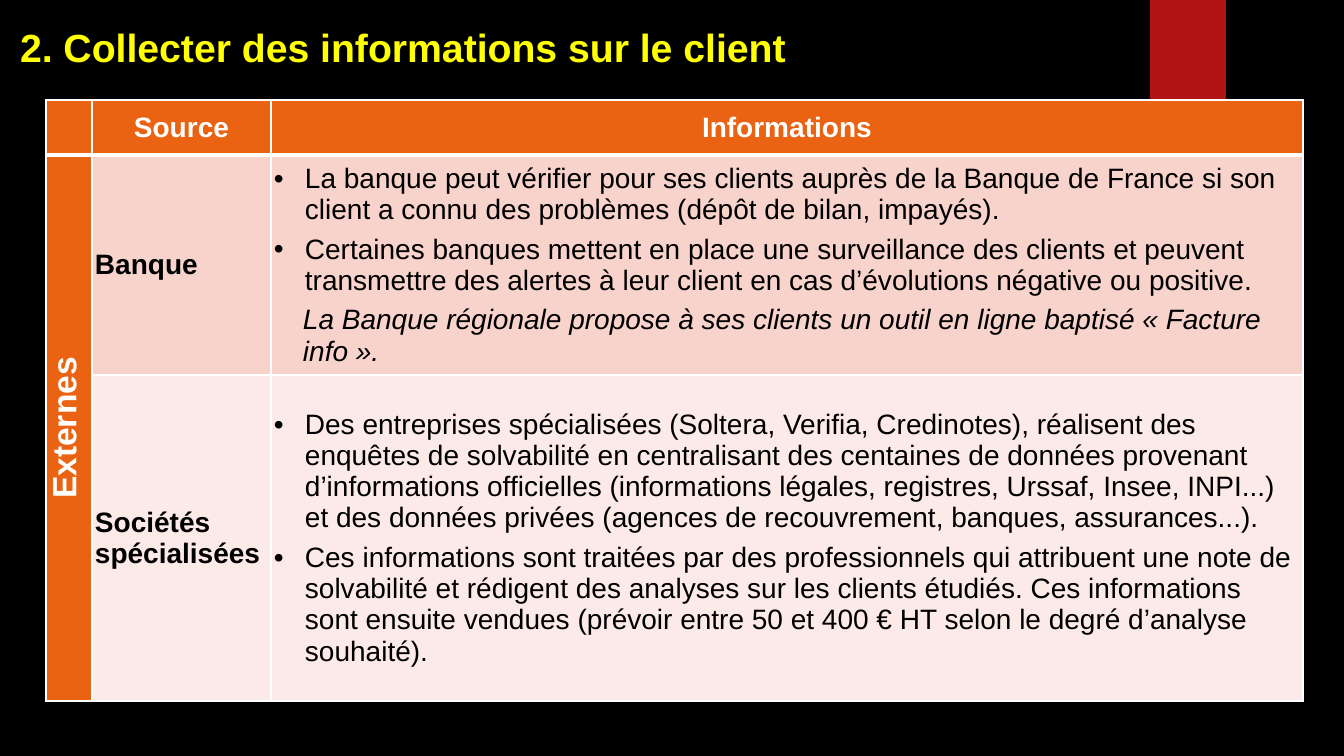
"""Build the slide on collecting information about a client."""
from lxml import etree
from pptx import Presentation
from pptx.dml.color import RGBColor
from pptx.enum.shapes import MSO_SHAPE
from pptx.enum.text import MSO_ANCHOR, MSO_AUTO_SIZE, PP_ALIGN
from pptx.oxml.ns import qn
from pptx.util import Pt

PX = 914400 / 100.8
RECT = MSO_SHAPE.RECTANGLE
TOP, MIDDLE = MSO_ANCHOR.TOP, MSO_ANCHOR.MIDDLE
LEFT, CENTER = PP_ALIGN.LEFT, PP_ALIGN.CENTER
NO_FIT = MSO_AUTO_SIZE.NONE
BLACK = RGBColor(0x00, 0x00, 0x00)
WHITE = RGBColor(0xFF, 0xFF, 0xFF)
YELLOW = RGBColor(0xFF, 0xFF, 0x00)
RED = RGBColor(0xB0, 0x15, 0x13)
ORANGE = RGBColor(0xEA, 0x63, 0x12)
PINK = RGBColor(0xF7, 0xD3, 0xCC)
PALE = RGBColor(0xFB, 0xEA, 0xE7)


def px(n):
    return round(n * PX)


def add_run(p, text, size, color, bold=False, italic=False):
    r = p.add_run()
    r.text = text
    r.font.name = "Arial"
    r.font.size = Pt(size)
    r.font.bold = bold
    r.font.italic = italic
    r.font.color.rgb = color


prs = Presentation()
prs.slide_width, prs.slide_height = px(1344), px(756)
s = prs.slides.add_slide(prs.slide_layouts[5])
s.background.fill.solid()
s.background.fill.fore_color.rgb = BLACK

title = s.shapes.title
title.left, title.top, title.width, title.height = px(10), px(14), px(915), px(57)
tf = title.text_frame
tf.word_wrap = True
tf.auto_size = NO_FIT
tf.vertical_anchor = TOP
tf.margin_left = tf.margin_right = px(10)
tf.margin_top, tf.margin_bottom = px(9), 0
p = tf.paragraphs[0]
p.alignment = LEFT
add_run(p, "2. Collecter des informations sur le client", 28, YELLOW, bold=True)

ribbon = s.shapes.add_shape(RECT, px(1150), 0, px(76), px(126))
ribbon.shadow.inherit = False
ribbon.fill.solid()
ribbon.fill.fore_color.rgb = RED
ribbon.line.fill.background()

COLS, ROWS = [46, 179, 1032], [55, 220, 326]
table = s.shapes.add_table(
    3, 3, px(46), px(100), px(sum(COLS)), px(sum(ROWS))).table
for col, width in zip(table.columns, COLS):
    col.width = px(width)
for row, height in zip(table.rows, ROWS):
    row.height = px(height)

FILLS = [ORANGE, PINK, PALE]
for i in range(3):
    for j in range(3):
        cell = table.cell(i, j)
        cell.vertical_anchor = MIDDLE
        cell.margin_left = cell.margin_right = px(3)
        cell.margin_top = cell.margin_bottom = 0
        tcPr = cell._tc.get_or_add_tcPr()
        widths = {"lnL": 1, "lnR": 1, "lnT": 3 if i == 1 else 1, "lnB": 3 if i == 0 else 1}
        for side, width in widths.items():
            ln = etree.SubElement(tcPr, qn("a:" + side), w=str(Pt(width)))
            fill = etree.SubElement(ln, qn("a:solidFill"))
            etree.SubElement(fill, qn("a:srgbClr"), val=str(WHITE))
        cell.fill.solid()
        cell.fill.fore_color.rgb = ORANGE if j == 0 else FILLS[i]

table.cell(1, 0).merge(table.cell(2, 0))
table.cell(1, 0)._tc.tcPr.set("vert", "vert270")

LABELS = [
    (0, 1, "Source", 20, WHITE, CENTER),
    (0, 2, "Informations", 20, WHITE, CENTER),
    (1, 0, "Externes", 24, WHITE, CENTER),
    (1, 1, "Banque", 20, BLACK, LEFT),
    (2, 1, "Sociétés spécialisées", 20, BLACK, LEFT),
]
for i, j, text, size, color, align in LABELS:
    p = table.cell(i, j).text_frame.paragraphs[0]
    p.alignment = align
    add_run(p, text, size, color, bold=True)

DETAILS = {
    1: [
        ("La banque peut vérifier pour ses clients auprès de la Banque de France "
         "si son client a connu des problèmes (dépôt de bilan, impayés).", True),
        ("Certaines banques mettent en place une surveillance des clients et peuvent "
         "transmettre des alertes à leur client en cas d’évolutions négative ou positive.", True),
        ("La Banque régionale propose à ses clients un outil en ligne baptisé "
         "« Facture info ».", False),
    ],
    2: [
        ("Des entreprises spécialisées (Soltera, Verifia, Credinotes), réalisent des "
         "enquêtes de solvabilité en centralisant des centaines de données provenant "
         "d’informations officielles (informations légales, registres, Urssaf, Insee, "
         "INPI...) et des données privées (agences de recouvrement, banques, "
         "assurances...).", True),
        ("Ces informations sont traitées par des professionnels qui attribuent une note de "
         "solvabilité et rédigent des analyses sur les clients étudiés. Ces informations "
         "sont ensuite vendues (prévoir entre 50 et 400 € HT selon le degré d’analyse "
         "souhaité).", True),
    ],
}
for i, paragraphs in DETAILS.items():
    tf = table.cell(i, 2).text_frame
    for k, (text, bulleted) in enumerate(paragraphs):
        p = tf.add_paragraph() if k else tf.paragraphs[0]
        pPr = p._p.get_or_add_pPr()
        pPr.set("marL", str(px(31 if bulleted else 29)))
        pPr.set("indent", str(px(-31 if bulleted else 0)))
        if bulleted:
            etree.SubElement(pPr, qn("a:buFont"), typeface="Arial")
            etree.SubElement(pPr, qn("a:buChar"), char="•")
        if k:
            p.space_before = Pt(6)
        add_run(p, text, 20, BLACK, italic=not bulleted)

prs.save("out.pptx")
